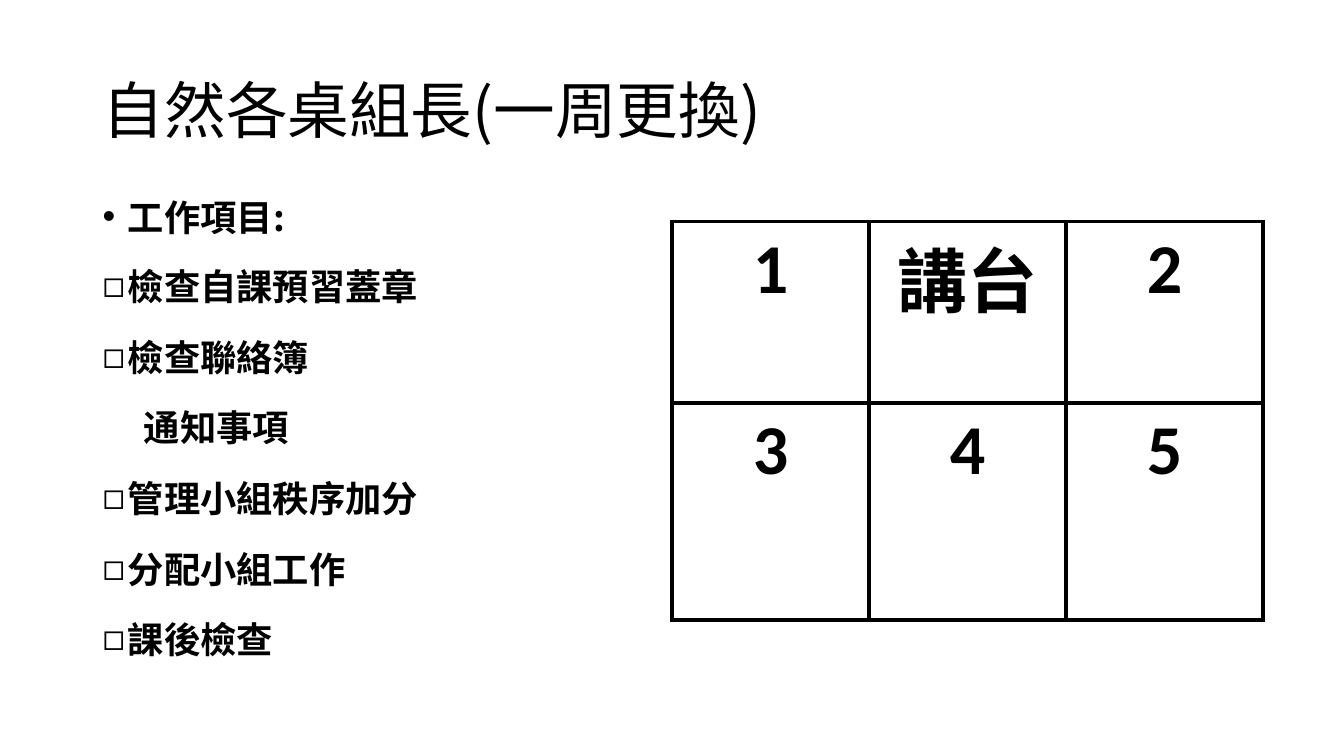
from dataclasses import dataclass

from lxml.etree import SubElement
from pptx import Presentation
from pptx.dml.color import RGBColor
from pptx.enum.text import MSO_ANCHOR, MSO_AUTO_SIZE, PP_ALIGN
from pptx.oxml.ns import qn
from pptx.util import Emu, Inches, Pt

SLIDE_WIDTH, SLIDE_HEIGHT = Inches(13.33), Inches(7.5)


@dataclass(frozen=True)
class Theme:
    ink: RGBColor = RGBColor(0, 0, 0)
    paper: RGBColor = RGBColor(255, 255, 255)
    cjk: str = "Noto Sans CJK JP"
    latin: str = "Calibri"
    bullet: str = "Arial"
    title_size: float = 44
    duty_size: float = 25.9
    seat_size: float = 50
    border: float = 3


@dataclass(frozen=True)
class Area:
    left: float
    top: float
    width: float
    height: float

    def lengths(self) -> tuple[Emu, ...]:
        shares = (self.left, self.top, self.width, self.height)
        sides = (SLIDE_WIDTH, SLIDE_HEIGHT) * 2
        return tuple(Emu(round(share * side)) for share, side in zip(shares, sides))


@dataclass(frozen=True)
class Duty:
    wording: str
    bullet: str = "◻"
    spacing: float = 1.3
    margin: float = 0.25
    hanging: float = -0.25


THEME = Theme()
TITLE_AREA = Area(0.069, 0.054, 0.863, 0.193)
DUTY_AREA = Area(0.069, 0.267, 0.42, 0.635)
SEAT_AREA = Area(0.5, 0.293, 0.44, 0.527)
SEAT_ROW_SHARES = (0.455, 0.545)

DUTIES = (
    Duty("工作項目:", bullet="•", spacing=0.7),
    Duty("檢查自課預習蓋章"),
    Duty("檢查聯絡簿"),
    Duty("通知事項", bullet="", margin=0.41, hanging=0),
    Duty("管理小組秩序加分"),
    Duty("分配小組工作"),
    Duty("課後檢查"),
)
SEATS = (("1", "講台", "2"), ("3", "4", "5"))


def apply_format(target, values: dict) -> None:
    for attribute, value in values.items():
        setattr(target, attribute, value)


def write(paragraph, wording: str, size: float, latin: str, bold: bool, layout: dict) -> None:
    apply_format(paragraph, layout)
    run = paragraph.add_run()
    run.text = wording
    apply_format(run.font, {"size": Pt(size), "name": latin, "bold": bold})
    run.font.color.rgb = THEME.ink
    SubElement(run.font._element, qn("a:ea"), typeface=THEME.cjk)


def add_title(slide, wording: str) -> None:
    heading = slide.shapes.title
    apply_format(heading, dict(zip(("left", "top", "width", "height"), TITLE_AREA.lengths())))
    apply_format(heading.text_frame, {
        "word_wrap": True,
        "auto_size": MSO_AUTO_SIZE.NONE,
        "vertical_anchor": MSO_ANCHOR.MIDDLE,
    })
    write(heading.text_frame.paragraphs[0], wording, THEME.title_size, THEME.cjk, False,
          {"alignment": PP_ALIGN.LEFT, "line_spacing": 0.9})


def add_duties(slide, duties: tuple[Duty, ...]) -> None:
    frame = slide.shapes.add_textbox(*DUTY_AREA.lengths()).text_frame
    frame.word_wrap = True
    for index, duty in enumerate(duties):
        paragraph = frame.add_paragraph() if index else frame.paragraphs[0]
        write(paragraph, duty.wording, THEME.duty_size, THEME.cjk, True,
              {"line_spacing": duty.spacing, "space_before": Pt(10)})
        properties = paragraph._p.get_or_add_pPr()
        properties.set("marL", str(Inches(duty.margin)))
        properties.set("indent", str(Inches(duty.hanging)))
        if duty.bullet:
            SubElement(properties, qn("a:buFont"), typeface=THEME.bullet)
            SubElement(properties, qn("a:buChar"), char=duty.bullet)


def add_borders(cell) -> None:
    properties = cell._tc.get_or_add_tcPr()
    for position, edge in enumerate(("a:lnL", "a:lnR", "a:lnT", "a:lnB")):
        line = properties.makeelement(qn(edge), {"w": str(Pt(THEME.border))})
        ink = SubElement(SubElement(line, qn("a:solidFill")), qn("a:srgbClr"))
        ink.set("val", str(THEME.ink))
        properties.insert(position, line)


def add_seating(slide, seats: tuple[tuple[str, ...], ...]) -> None:
    left, top, width, height = SEAT_AREA.lengths()
    seating = slide.shapes.add_table(len(seats), len(seats[0]), left, top, width, height).table
    apply_format(seating, {"first_row": False, "horz_banding": False})
    for row, share in zip(seating.rows, SEAT_ROW_SHARES):
        row.height = Emu(round(height * share))
    for cell, wording in zip(seating.iter_cells(), sum(seats, ())):
        cell.fill.solid()
        cell.fill.fore_color.rgb = THEME.paper
        add_borders(cell)
        write(cell.text_frame.paragraphs[0], wording, THEME.seat_size, THEME.latin, True,
              {"alignment": PP_ALIGN.CENTER})


def main() -> None:
    deck = Presentation()
    apply_format(deck, {"slide_width": SLIDE_WIDTH, "slide_height": SLIDE_HEIGHT})
    slide = deck.slides.add_slide(deck.slide_layouts.get_by_name("Title Only"))
    add_title(slide, "自然各桌組長(一周更換)")
    add_duties(slide, DUTIES)
    add_seating(slide, SEATS)
    deck.save("out.pptx")


if __name__ == "__main__":
    main()
